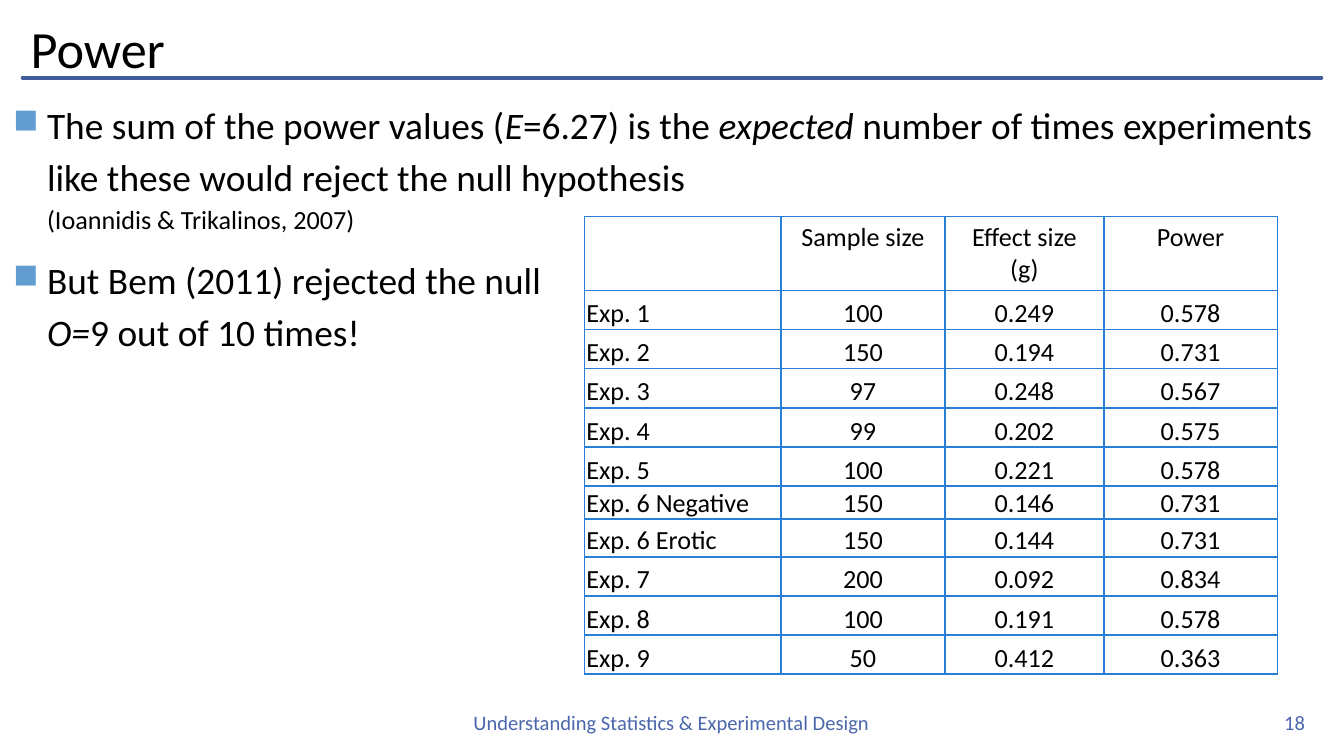
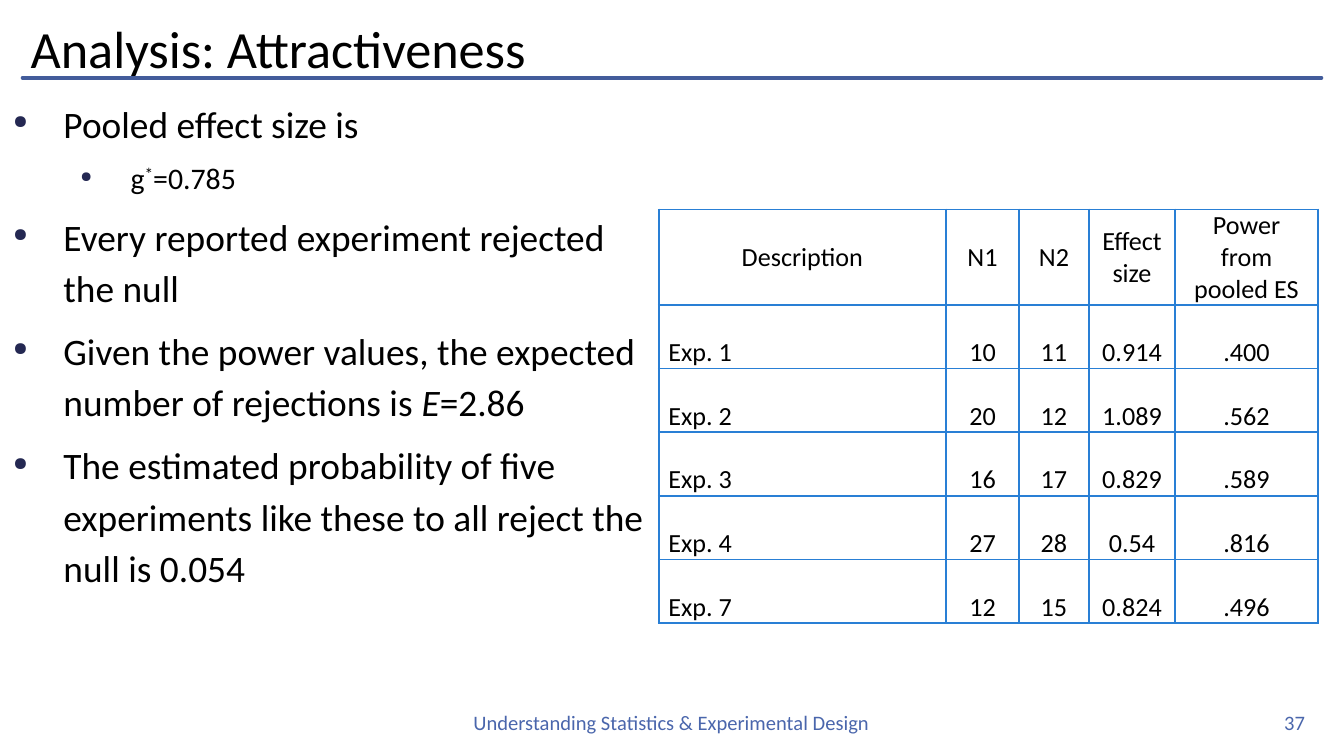
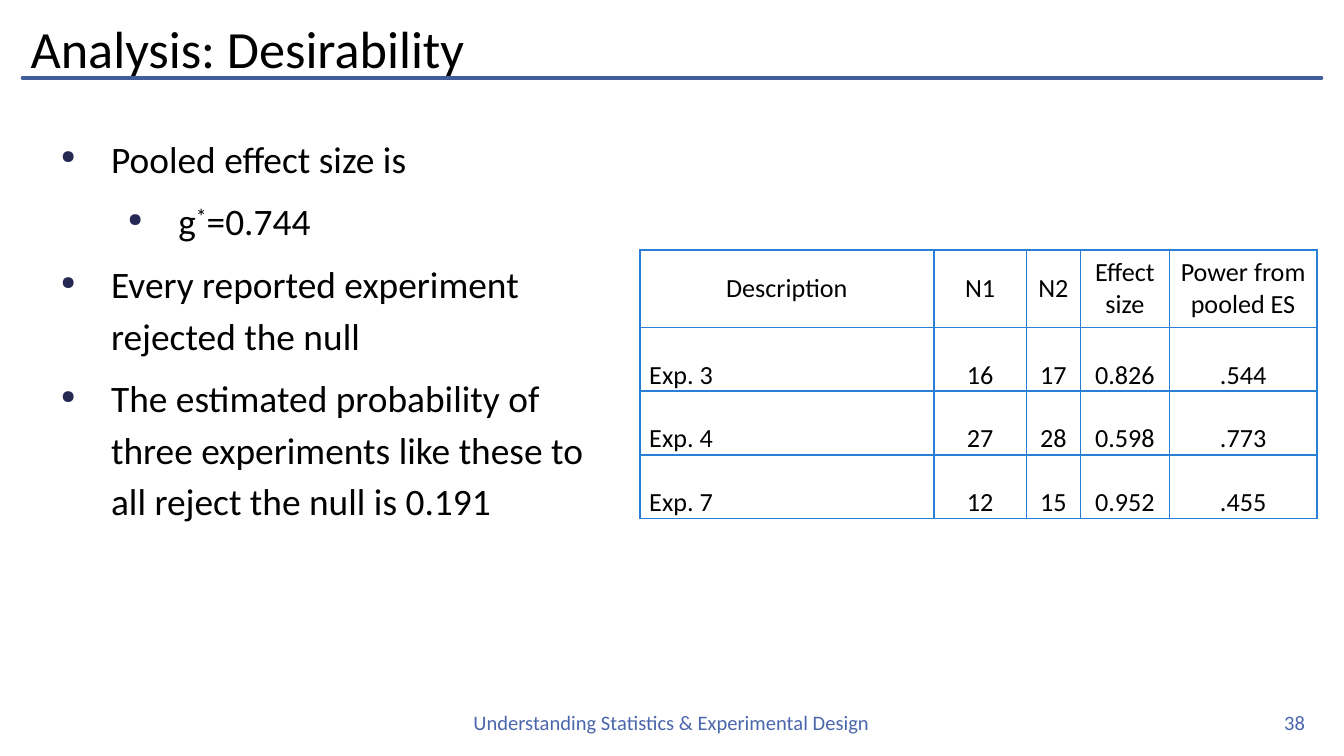
from lxml import etree
from pptx import Presentation
from pptx.dml.color import RGBColor as RGB
from pptx.enum.shapes import MSO_CONNECTOR as CONN, MSO_SHAPE as SHAPE
from pptx.enum.text import MSO_ANCHOR as ANCHOR, MSO_AUTO_SIZE as AUTO, PP_ALIGN as ALIGN
from pptx.oxml.ns import qn
from pptx.util import Cm, Pt

COLORS = {
    "text": "000000", "paper": "FFFFFF", "footer": "4A66AC", "rule": "435C9B",
    "grid": "297FD5", "square": "629DD1", "dot": "242852",
}
FONT = "Calibri"
FOOTER = "Understanding Statistics & Experimental Design"

# Bullet styles: character, colour, size in percent, hanging indent, spacing
SQUARE = dict(char="■", color="square", pct=92, hang=0.64, before=0.2, after=4.5)
DOT = dict(char="●", color="dot", pct=50, hang=0.95, before=0.3, after=0)
LEVEL_STEP = 1.27

# Table styles: insets are left, top, right, bottom in cm
PLAIN = dict(head_inset=(0.25, 0.1, 0.25, 0.1), head_anchor=ANCHOR.TOP,
             inset=(0.03, 0.03, 0.03, 0), label_anchor=ANCHOR.BOTTOM, spacing=1)
SPACED = dict(head_inset=(0.18, 0, 0.18, 0), head_anchor=ANCHOR.MIDDLE,
              inset=(0.18, 0, 0.18, 0), label_anchor=ANCHOR.TOP, spacing=2)
ANALYSIS_HEAD = ("Description", "N1", "N2", "Effect size", "Power from pooled ES")


def sub(parent, tag, **attrs):
    return etree.SubElement(parent, qn(tag), **attrs)


def set_insets(target, inset):
    (target.margin_left, target.margin_top,
     target.margin_right, target.margin_bottom) = map(Cm, inset)


class Deck:
    def __init__(self):
        self.prs = Presentation()
        self.prs.slide_width, self.prs.slide_height = Cm(25.4), Cm(14.29)
        self.s = None

    def color(self, name):
        return RGB.from_string(COLORS[name])

    def run(self, p, text, size, color="text", italic=False, sup=False):
        r = p.add_run()
        r.text = text
        r.font.name, r.font.size = FONT, Pt(size)
        r.font.color.rgb = self.color(color)
        if italic:
            r.font.italic = True
        if sup:
            r.font._element.set("baseline", "30000")

    def slide(self, title, number):
        self.s = self.prs.slides.add_slide(self.prs.slide_layouts[5])
        self.footer(8.75 * 2.54, 2.62, str(number), ALIGN.RIGHT)
        self.footer(6.2, 12.98, FOOTER, ALIGN.CENTER)
        self.rule()
        sp = self.s.shapes.title
        sp.left, sp.top, sp.width, sp.height = map(Cm, (0.33, 0.08, 22.99, 1.5))
        tf = sp.text_frame
        tf.auto_size, tf.vertical_anchor = AUTO.NONE, ANCHOR.BOTTOM
        set_insets(tf, (0.25, 0.08, 0.25, 0.08))
        tf.paragraphs[0].alignment = ALIGN.LEFT
        self.run(tf.paragraphs[0], title, 28)

    def footer(self, left, width, text, align):
        sp = self.s.shapes.add_shape(SHAPE.RECTANGLE, Cm(left), Cm(13.28), Cm(width), Cm(0.76))
        sp.shadow.inherit = False
        sp.fill.solid()
        sp.fill.fore_color.rgb = self.color("paper")
        sp.line.fill.background()
        tf = sp.text_frame
        tf.vertical_anchor = ANCHOR.MIDDLE
        set_insets(tf, (0.18, 0.1, 0.18, 0.1))
        tf.paragraphs[0].alignment = align
        self.run(tf.paragraphs[0], text, 11, "footer")

    def rule(self):
        line = self.s.shapes.add_connector(CONN.STRAIGHT, Cm(0.43), Cm(1.47), Cm(24.97), Cm(1.47))
        line.line.color.rgb = self.color("rule")
        line.line.width = Pt(2.25)
        line.line._ln.set("cap", "rnd")
        sub(line._element.spPr, "a:effectLst")

    def bullets(self, box, style, items):
        """Each item is (level, size, runs); a run is text or (text, format), None breaks the line."""
        tf = self.s.shapes.add_textbox(*map(Cm, box)).text_frame
        tf.word_wrap = True
        set_insets(tf, (0.25, 0.13, 0.25, 0.13))
        for i, (level, size, runs) in enumerate(items):
            p = tf.add_paragraph() if i else tf.paragraphs[0]
            p.level = level
            pPr = p._p.get_or_add_pPr()
            pPr.set("marL", str(Cm(style["hang"] + level * LEVEL_STEP)))
            pPr.set("indent", str(-Cm(style["hang"])))
            sub(sub(pPr, "a:buClr"), "a:srgbClr", val=COLORS[style["color"]])
            sub(pPr, "a:buSzPct", val=str(style["pct"] * 1000))
            sub(pPr, "a:buChar", char=style["char"])
            p.line_spacing = 1.15
            p.space_before = Pt(style["before"] * size if i else 0)
            p.space_after = Pt(style["after"])
            for part in runs:
                if part is None:
                    p.add_line_break()
                    continue
                text, fmt = (part, {}) if isinstance(part, str) else part
                self.run(p, text, **{"size": size, **fmt})

    def borders(self, cell):
        tcPr = cell._tc.get_or_add_tcPr()
        for side in "LRTB":
            ln = sub(tcPr, f"a:ln{side}", w=str(Pt(1)))
            sub(sub(ln, "a:solidFill"), "a:srgbClr", val=COLORS["grid"])

    def table(self, left, top, widths, heights, rows, style):
        frame = self.s.shapes.add_table(len(rows), len(widths), Cm(left), Cm(top),
                                        Cm(sum(widths)), Cm(sum(heights)))
        table = frame.table
        table.first_row = table.horz_banding = False
        for column, width in zip(table.columns, widths):
            column.width = Cm(width)
        for row, height in zip(table.rows, heights):
            row.height = Cm(height)
        for i, values in enumerate(rows):
            for j, text in enumerate(values):
                cell = table.cell(i, j)
                self.borders(cell)
                cell.fill.background()
                set_insets(cell, style["inset"] if i else style["head_inset"])
                body_anchor = ANCHOR.BOTTOM if j else style["label_anchor"]
                cell.vertical_anchor = body_anchor if i else style["head_anchor"]
                p = cell.text_frame.paragraphs[0]
                p.alignment = ALIGN.LEFT if i and not j else ALIGN.CENTER
                if i:
                    p.line_spacing = style["spacing"]
                if text:
                    self.run(p, text, 14)


def main():
    deck = Deck()
    italic, sup = dict(italic=True), dict(sup=True)

    # Power of the ten experiments
    deck.slide("Power", 18)
    deck.bullets((0, 1.68, 25.4, 11.76), SQUARE, [
        (0, 20, ["The sum of the power values (", ("E", italic), "=6.27) is the ",
                 ("expected", italic),
                 " number of times experiments like these would reject the null hypothesis ",
                 None, ("(Ioannidis & Trikalinos, 2007)", dict(size=14))]),
        (0, 20, ["But Bem (2011) rejected the null", None, ("O=", italic),
                 "9 out of 10 times!"]),
    ])
    deck.table(11.05, 4.09, (3.71, 3.1, 3, 3.28),
               [1.4] + [0.74] * 5 + [0.61, 0.71] + [0.74] * 3, [
        ("", "Sample size", "Effect size (g)", "Power"),
        ("Exp. 1", "100", "0.249", "0.578"),
        ("Exp. 2", "150", "0.194", "0.731"),
        ("Exp. 3", "97", "0.248", "0.567"),
        ("Exp. 4", "99", "0.202", "0.575"),
        ("Exp. 5", "100", "0.221", "0.578"),
        ("Exp. 6 Negative", "150", "0.146", "0.731"),
        ("Exp. 6 Erotic", "150", "0.144", "0.731"),
        ("Exp. 7", "200", "0.092", "0.834"),
        ("Exp. 8", "100", "0.191", "0.578"),
        ("Exp. 9", "50", "0.412", "0.363"),
    ], PLAIN)

    # Attractiveness
    deck.slide("Analysis: Attractiveness", 37)
    deck.table(12.45, 3.96, (5.43, 1.38, 1.32, 1.63, 2.7), [1.78] + [1.2] * 5, [
        ANALYSIS_HEAD,
        ("Exp. 1", "10", "11", "0.914", ".400"),
        ("Exp. 2", "20", "12", "1.089", ".562"),
        ("Exp. 3", "16", "17", "0.829", ".589"),
        ("Exp. 4", "27", "28", "0.54", ".816"),
        ("Exp. 7", "12", "15", "0.824", ".496"),
    ], SPACED)
    deck.bullets((0, 1.65, 12.45, 3.25), DOT, [
        (0, 20, ["Pooled effect size is"]),
        (1, 16, ["g", ("*", sup), "=0.785"]),
        (0, 20, ["Every reported experiment rejected the null"]),
        (0, 20, ["Given the power values, the expected number of rejections is ",
                 ("E", italic), "=2.86"]),
        (0, 20, ["The estimated probability of five experiments like these "
                 "to all reject the null is 0.054"]),
    ])

    # Desirability
    deck.slide("Analysis: Desirability", 38)
    deck.table(12.09, 4.72, (5.56, 1.75, 1.02, 1.68, 2.79), [1.47] + [1.2] * 3, [
        ANALYSIS_HEAD,
        ("Exp. 3", "16", "17", "0.826", ".544"),
        ("Exp. 4", "27", "28", "0.598", ".773"),
        ("Exp. 7", "12", "15", "0.952", ".455"),
    ], SPACED)
    deck.bullets((0.9, 2.31, 11.13, 2.57), DOT, [
        (0, 20, ["Pooled effect size is"]),
        (1, 20, ["g", ("*", sup), "=0.744"]),
        (0, 20, ["Every reported experiment rejected the null"]),
        (0, 20, ["The estimated probability of three experiments like these "
                 "to all reject the null is 0.191"]),
    ])

    deck.prs.save("out.pptx")


if __name__ == "__main__":
    main()
